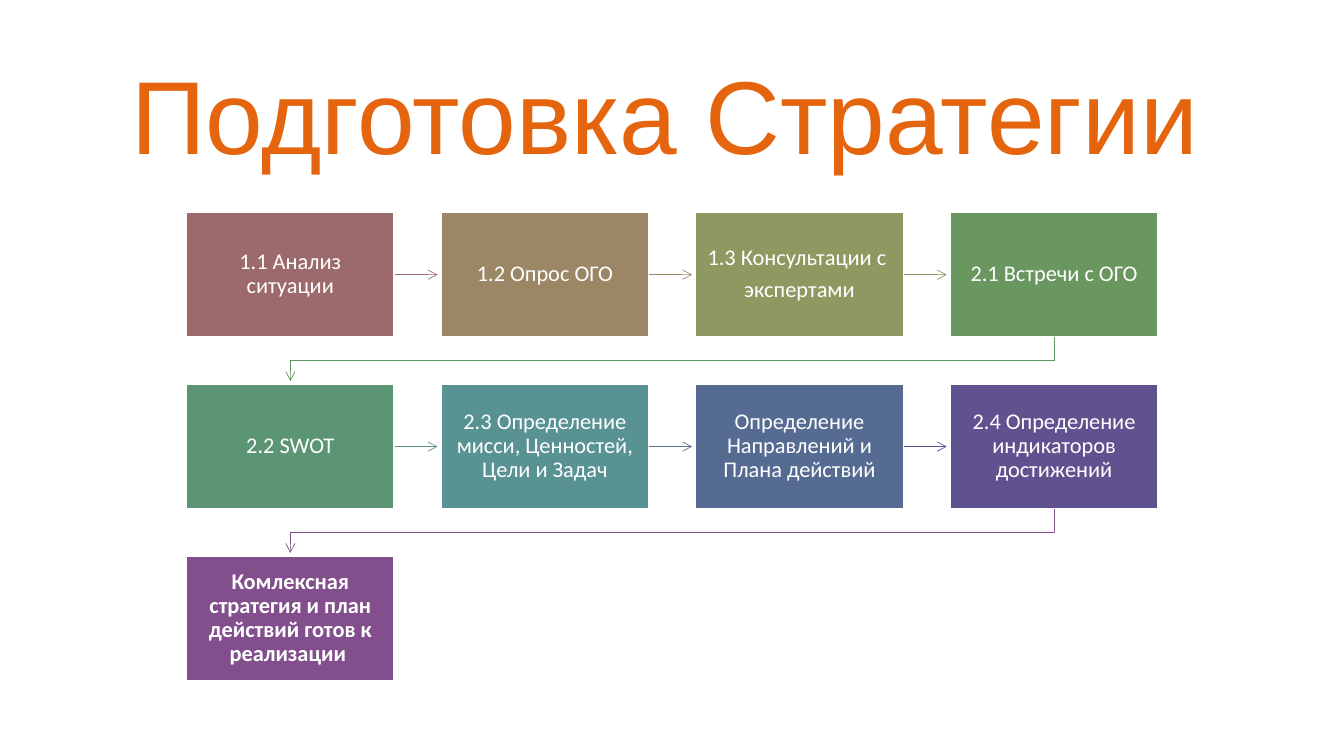
from pptx import Presentation
from pptx.dml.color import RGBColor
from pptx.enum.shapes import MSO_CONNECTOR, MSO_SHAPE
from pptx.enum.text import MSO_ANCHOR, PP_ALIGN
from pptx.oxml.ns import qn
from pptx.util import Inches, Pt
from lxml import etree

RECTANGLE = MSO_SHAPE.RECTANGLE
STRAIGHT = MSO_CONNECTOR.STRAIGHT
MIDDLE = MSO_ANCHOR.MIDDLE
LEFT, CENTER = PP_ALIGN.LEFT, PP_ALIGN.CENTER

COLUMNS = 4
BOX_WIDTH, BOX_HEIGHT = 2.06, 1.23
COLUMN_STEP, ROW_STEP = 2.525, 1.705
WHITE = "FFFFFF"

# Text, box fill and colour of the arrow to the next step
STEPS = [
    ("1.1 Анализ ситуации", "9C6A6A", "9C6A6A"),
    ("1.2 Опрос ОГО", "9B8666", "9B8A65"),
    ("1.3 Консультации с \nэкспертами", "8E9962", "839961"),
    ("2.1 Встречи с ОГО", "69975F", "5D9661"),
    ("2.2 SWOT", "5B9574", "5A9486"),
    ("2.3 Определение мисси, Ценностей, Цели и Задач", "589293", "567691"),
    ("Определение Направлений и Плана действий", "556B91", "5B528F"),
    ("2.4 Определение индикаторов достижений", "60528E", "824F8C"),
    ("Комлексная стратегия и план действий готов к реализации ", "824F8C", None),
]


def color(hex_string):
    return RGBColor.from_string(hex_string)


def set_attributes(target, values):
    for name, value in values.items():
        setattr(target, name, value)


def write_text(frame, text, frame_format, para_format, font_format, font_color):
    set_attributes(frame, {"word_wrap": True, "vertical_anchor": MIDDLE, **frame_format})
    for index, line in enumerate(text.split("\n")):
        para = frame.paragraphs[0] if index == 0 else frame.add_paragraph()
        set_attributes(para, para_format)
        span = para.add_run()
        span.text = line
        set_attributes(span.font, font_format)
        span.font.color.rgb = color(font_color)


def style_arrow(arrow, line_color):
    arrow.line.color.rgb = color(line_color)
    arrow.line.width = Pt(0.5)
    properties = arrow.line._get_or_add_ln()
    etree.SubElement(properties, qn("a:tailEnd"), type="arrow")


def add_title(page, left, top, width, height):
    box = page.shapes.add_textbox(*map(Inches, (left, top, width, height)))
    write_text(box.text_frame, " Подготовка Стратегии", {},
               {"alignment": LEFT, "space_after": Pt(6)},
               {"size": Pt(74), "name": "Arial"}, "E4650E")


def add_step(page, left, top, text, fill, bold):
    box = page.shapes.add_shape(
        RECTANGLE, *map(Inches, (left, top, BOX_WIDTH, BOX_HEIGHT)))
    box.shadow.inherit = False
    box.fill.solid()
    box.fill.fore_color.rgb = color(fill)
    box.line.color.rgb = color(WHITE)
    box.line.width = Pt(1)
    margins = {"margin_left": Inches(0.1), "margin_right": Inches(0.1),
               "margin_top": Inches(0.11), "margin_bottom": Inches(0.11)}
    write_text(box.text_frame, text, margins,
               {"alignment": CENTER, "line_spacing": 0.9, "space_after": Pt(5.6)},
               {"size": Pt(16), "name": "Calibri", "bold": bold}, WHITE)


def add_straight_arrow(page, left, top, line_color):
    start, middle = left + BOX_WIDTH, top + BOX_HEIGHT / 2
    arrow = page.shapes.add_connector(
        STRAIGHT, *map(Inches, (start, middle, start + 0.43, middle)))
    style_arrow(arrow, line_color)
    etree.SubElement(arrow._element.spPr, qn("a:effectLst"))


def add_row_arrow(page, left, top, first_left, line_color):
    start, end = left + BOX_WIDTH / 2, first_left + BOX_WIDTH / 2
    bottom = top + BOX_HEIGHT
    turn = bottom + 0.24
    builder = page.shapes.build_freeform(Inches(start), Inches(bottom))
    corners = [(start, turn), (end, turn), (end, bottom + 0.44)]
    builder.add_line_segments(
        [(Inches(x), Inches(y)) for x, y in corners], close=False)
    arrow = builder.convert_to_shape()
    arrow.fill.background()
    style_arrow(arrow, line_color)
    arrow.shadow.inherit = False


def add_process(page, left, top):
    for index, (text, fill, arrow_color) in enumerate(STEPS):
        row, column = divmod(index, COLUMNS)
        x, y = left + column * COLUMN_STEP, top + row * ROW_STEP
        # The arrow lies behind its box; the last step has none
        if arrow_color and column < COLUMNS - 1:
            add_straight_arrow(page, x, y, arrow_color)
        elif arrow_color:
            add_row_arrow(page, x, y, left, arrow_color)
        add_step(page, x, y, text, fill, bold=arrow_color is None)


def main():
    deck = Presentation()
    deck.slide_width, deck.slide_height = Inches(13.33), Inches(7.5)
    page = deck.slides.add_slide(deck.slide_layouts[6])
    page.background.fill.solid()
    page.background.fill.fore_color.rgb = color(WHITE)
    add_title(page, 0.92, 0.4, 11.5, 1.45)
    add_process(page, 1.85, 2.11)
    deck.save("out.pptx")


if __name__ == "__main__":
    main()
